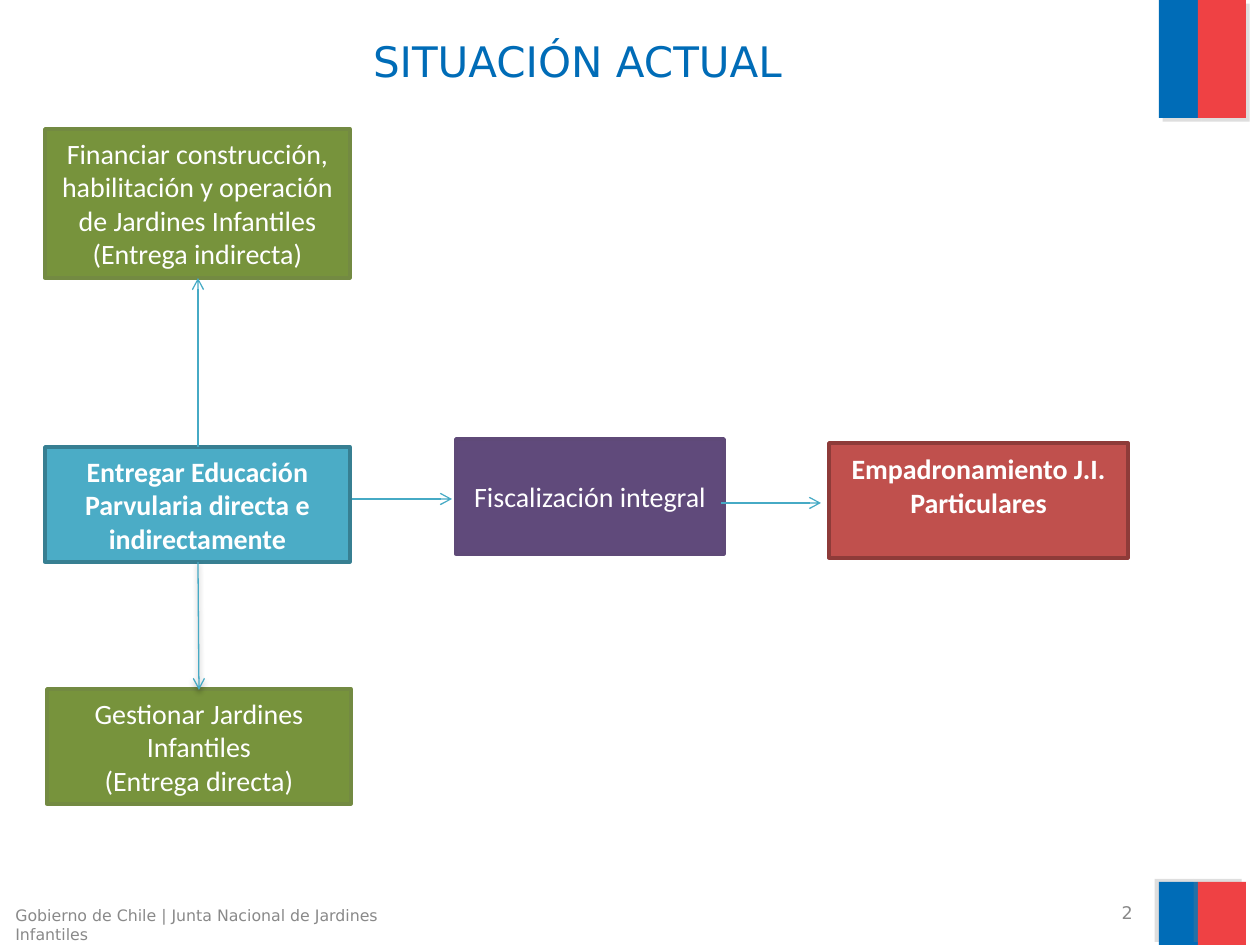
from lxml import etree
from pptx import Presentation
from pptx.dml.color import RGBColor
from pptx.enum.shapes import MSO_CONNECTOR, MSO_SHAPE
from pptx.enum.text import MSO_ANCHOR, PP_ALIGN
from pptx.oxml.ns import qn
from pptx.util import Pt

PX = 914400 / 126
RECTANGLE = MSO_SHAPE.RECTANGLE
STRAIGHT = MSO_CONNECTOR.STRAIGHT
TOP, MIDDLE = MSO_ANCHOR.TOP, MSO_ANCHOR.MIDDLE
LEFT, CENTER, RIGHT = PP_ALIGN.LEFT, PP_ALIGN.CENTER, PP_ALIGN.RIGHT

BLUE = RGBColor(0x00, 0x6C, 0xB7)
RED = RGBColor(0xEF, 0x41, 0x44)
GRAY = RGBColor(0x89, 0x89, 0x89)
WHITE = RGBColor(0xFF, 0xFF, 0xFF)
SHADOW_GRAY = RGBColor(0x80, 0x80, 0x80)
BLACK = RGBColor(0x00, 0x00, 0x00)
ARROW = RGBColor(0x46, 0xAA, 0xC5)
TEAL, TEAL_EDGE = RGBColor(0x4B, 0xAC, 0xC6), RGBColor(0x37, 0x7F, 0x92)
PURPLE, PURPLE_EDGE = RGBColor(0x60, 0x4A, 0x7B), RGBColor(0x5F, 0x4A, 0x78)
BRICK, BRICK_EDGE = RGBColor(0xC0, 0x50, 0x4D), RGBColor(0x8E, 0x3B, 0x39)
GREEN, GREEN_EDGE = RGBColor(0x77, 0x93, 0x3C), RGBColor(0x73, 0x8A, 0x42)

TITLE_FONT = {"name": "DejaVu Sans", "size": Pt(24), "bold": False}
FOOTER_FONT = {"name": "DejaVu Sans", "size": Pt(9)}
NUMBER_FONT = {"name": "DejaVu Sans", "size": Pt(10)}
BOX_FONT = {"name": "Calibri", "size": Pt(16), "bold": False}
BOLD_FONT = {**BOX_FONT, "bold": True}


def emu(*lengths):
    return [round(length * PX) for length in lengths]


def add_effects(properties, shadow=None):
    effects = properties.find(qn("a:effectLst"))
    if effects is None:
        effects = etree.SubElement(properties, qn("a:effectLst"))
    if shadow:
        color, opacity, blur, distance, angle = shadow
        outer = etree.SubElement(
            effects, qn("a:outerShdw"), blurRad=str(Pt(blur)),
            dist=str(Pt(distance)), dir=str(angle * 60000), rotWithShape="0")
        shade = etree.SubElement(outer, qn("a:srgbClr"), val=str(color))
        etree.SubElement(shade, qn("a:alpha"), val=str(opacity * 1000))


def write_text(shape, lines, font, color, align, anchor):
    frame = shape.text_frame
    frame.word_wrap = True
    frame.vertical_anchor = anchor
    frame.text = "\n".join(lines)
    for paragraph in frame.paragraphs:
        paragraph.alignment = align
        for run in paragraph.runs:
            for name, value in font.items():
                setattr(run.font, name, value)
            run.font.color.rgb = color


def add_rectangle(slide, box, fill, edge=None, shadow=None):
    shape = slide.shapes.add_shape(RECTANGLE, *emu(*box))
    shape.shadow.inherit = False
    shape.fill.solid()
    shape.fill.fore_color.rgb = fill
    if edge is None:
        shape.line.fill.background()
    else:
        shape.line.color.rgb = edge
        shape.line.width = Pt(2)
    add_effects(shape.element.spPr, shadow)
    return shape


def add_flag(slide, box, angle):
    left, top, width, height = box
    blue_width = 39
    shadow = (SHADOW_GRAY, 25, 0, 3, angle)
    add_rectangle(slide, (left, top, blue_width, height), BLUE, shadow=shadow)
    add_rectangle(slide, (left + blue_width, top, width - blue_width, height),
                  RED, shadow=shadow)


def add_label(slide, box, text, font, align, anchor):
    label = slide.shapes.add_textbox(*emu(*box))
    write_text(label, [text], font, GRAY, align, anchor)


def add_title(slide, box, text):
    title = slide.shapes.title
    title.left, title.top, title.width, title.height = emu(*box)
    write_text(title, [text], TITLE_FONT, BLUE, CENTER, MIDDLE)


def add_arrow(slide, start, end, shadow=None):
    arrow = slide.shapes.add_connector(STRAIGHT, *emu(*start, *end))
    arrow.line.color.rgb = ARROW
    arrow.line.width = Pt(0.75)
    etree.SubElement(arrow.line._get_or_add_ln(), qn("a:tailEnd"), type="arrow")
    add_effects(arrow.element.spPr, shadow)


def add_flow(slide, box):
    left, top, width, height = box
    column, row = 305, 115
    boxes = [
        ((0, 318, column, row), TEAL, TEAL_EDGE, BOLD_FONT, MIDDLE,
         ["Entregar Educación Parvularia directa e indirectamente"]),
        ((411, 310, 268, row), PURPLE, PURPLE_EDGE, BOX_FONT, MIDDLE,
         ["Fiscalización integral"]),
        ((784, 314, width - 784, row), BRICK, BRICK_EDGE, BOLD_FONT, TOP,
         ["Empadronamiento J.I. Particulares"]),
        ((2, height - row, 304, row), GREEN, GREEN_EDGE, BOX_FONT, MIDDLE,
         ["Gestionar Jardines Infantiles", "(Entrega directa)"]),
        ((0, 0, column, 149), GREEN, GREEN_EDGE, BOX_FONT, MIDDLE,
         ["Financiar construcción, habilitación y operación de Jardines Infantiles",
          "(Entrega indirecta)"]),
    ]
    for (x, y, w, h), fill, edge, font, anchor, lines in boxes:
        shape = add_rectangle(slide, (left + x, top + y, w, h), fill, edge)
        write_text(shape, lines, font, WHITE, CENTER, anchor)
        if anchor == TOP:
            shape.text_frame.margin_top = emu(9)[0]

    arrows = [
        ((153, 318), (153, 149), None),
        ((153, 433), (154, 561), (BLACK, 38, 3.1, 1.6, 90)),
        ((307, 370), (407, 370), None),
        ((676, 374), (776, 374), None),
    ]
    for start, end, shadow in arrows:
        add_arrow(slide, (left + start[0], top + start[1]),
                  (left + end[0], top + end[1]), shadow)


def main():
    presentation = Presentation()
    presentation.slide_width, presentation.slide_height = emu(1260, 945)
    slide = presentation.slides.add_slide(presentation.slide_layouts[5])
    add_flag(slide, (1159, 0, 87, 118), 45)
    add_flag(slide, (1159, 882, 87, 63), 215)
    add_label(slide, (3, 900, 399, 34),
              "Gobierno de Chile | Junta Nacional de Jardines Infantiles",
              FOOTER_FONT, LEFT, TOP)
    add_label(slide, (852, 900, 293, 26), "2", NUMBER_FONT, RIGHT, MIDDLE)
    add_title(slide, (15, 26, 1125, 69), "SITUACIÓN ACTUAL")
    add_flow(slide, (45, 129, 1083, 675))
    presentation.save("out.pptx")


if __name__ == "__main__":
    main()
